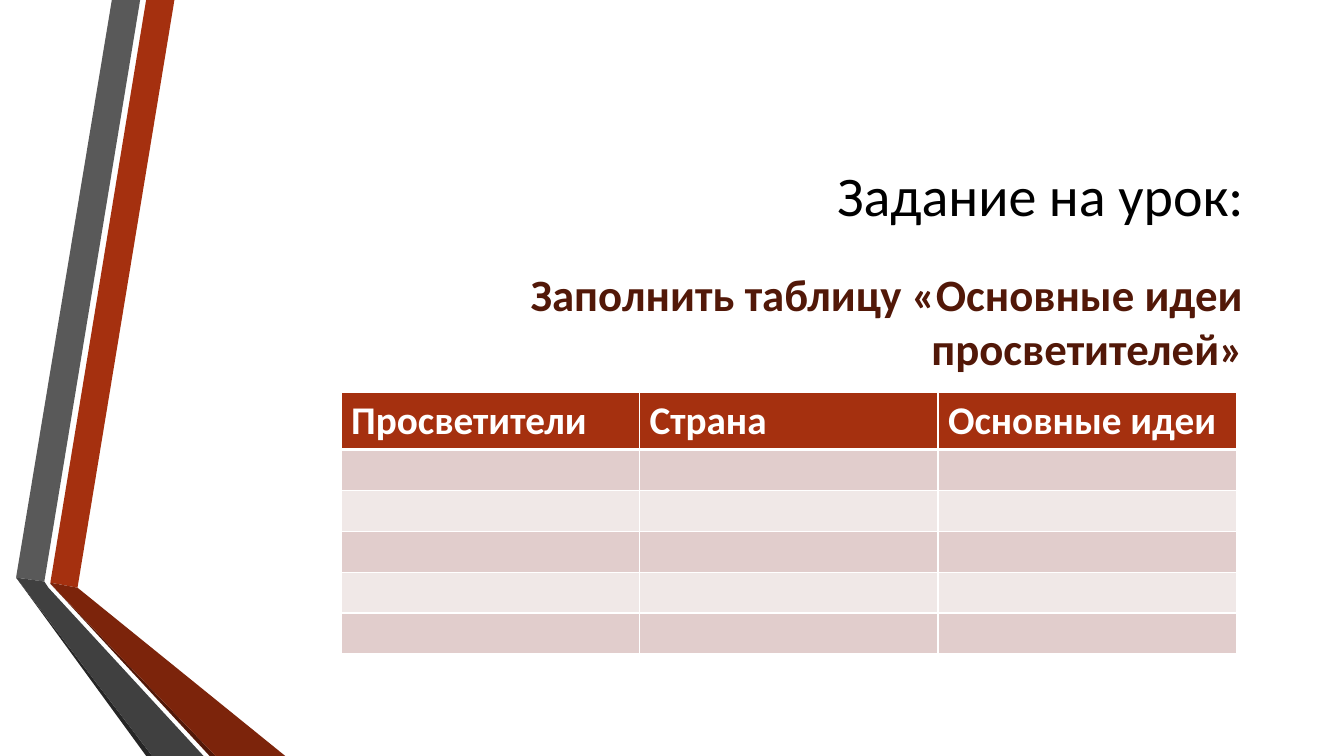
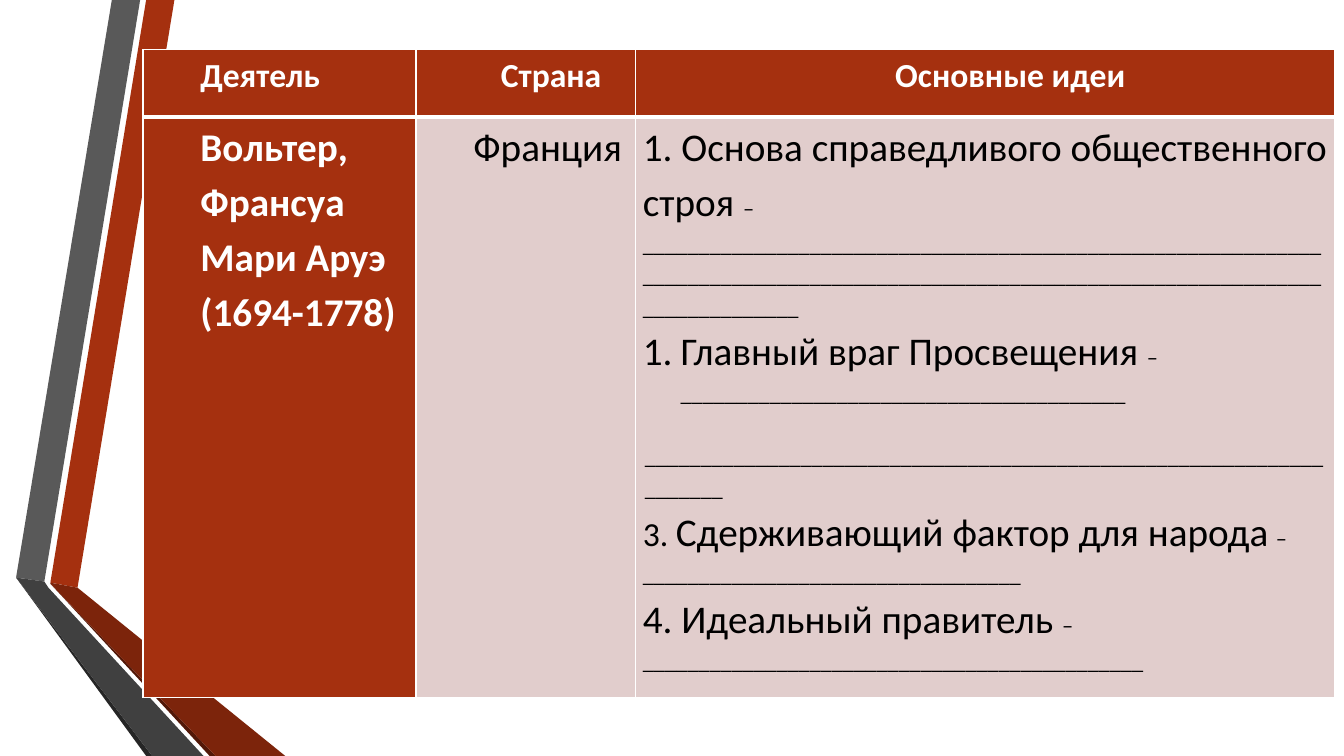
from lxml import etree
from pptx import Presentation
from pptx.dml.color import RGBColor
from pptx.enum.text import MSO_ANCHOR, MSO_AUTO_SIZE, PP_ALIGN
from pptx.oxml.ns import qn
from pptx.util import Pt

LEFT, CENTER, RIGHT = PP_ALIGN.LEFT, PP_ALIGN.CENTER, PP_ALIGN.RIGHT
BOTTOM = MSO_ANCHOR.BOTTOM
NO_AUTOFIT = MSO_AUTO_SIZE.NONE
TITLE_ONLY, BLANK = 5, 6

FONT = "Calibri"
WHITE, BLACK = "FFFFFF", "000000"
RED, DARK_RED, MAROON = "A5300F", "7C240B", "521808"
GREY, DARK_GREY, CHARCOAL = "595959", "404040", "262626"
PINK, PALE_PINK = "E1CDCC", "F0E8E7"

# Folded ribbons at the left edge: colour and outline in points
RIBBONS = [
    (RED, [(36, 416.2), (55.4, 419.8), (124.6, 0), (104.4, 0)]),
    (GREY, [(100.1, 0), (79.9, 0), (11.5, 412.6), (31.7, 415.4)]),
    (CHARCOAL, [(11.5, 412.6), (104.4, 540), (108.7, 540)]),
    (MAROON, [(36, 416.9), (149.8, 540), (154.1, 540)]),
    (DARK_RED, [(36, 416.2), (36, 416.9), (154.1, 540), (203.8, 540), (55.4, 419.8)]),
    (DARK_GREY, [(145.4, 540), (34.6, 419.8), (31.7, 415.4), (11.5, 412.6), (108.7, 540)]),
]


def color(value):
    return RGBColor.from_string(value)


def add_run(paragraph, text, size, font_color, bold=False):
    run = paragraph.add_run()
    run.text = text
    run.font.name = FONT
    run.font.size = Pt(size)
    run.font.bold = bold
    run.font.color.rgb = color(font_color)


def add_ribbons(presentation, slide):
    """Draw the ribbons and move them to the master, so every slide shows them."""
    master_tree = presentation.slide_master.shapes.element
    for number, (fill, outline) in enumerate(RIBBONS, start=101):
        points = [(Pt(x), Pt(y)) for x, y in outline]
        builder = slide.shapes.build_freeform(*points[0])
        builder.add_line_segments(points[1:], close=True)
        shape = builder.convert_to_shape()
        shape.shadow.inherit = False
        shape.fill.solid()
        shape.fill.fore_color.rgb = color(fill)
        shape.line.fill.background()
        shape.element.nvSpPr.cNvPr.set("id", str(number))
        master_tree.append(shape.element)


def set_borders(cell, top=1, bottom=1):
    properties = cell._tc.get_or_add_tcPr()
    edges = (("a:lnL", 1), ("a:lnR", 1), ("a:lnT", top), ("a:lnB", bottom))
    for position, (tag, width) in enumerate(edges):
        line = etree.Element(qn(tag), w=str(Pt(width)))
        fill = etree.SubElement(line, qn("a:solidFill"))
        etree.SubElement(fill, qn("a:srgbClr"), val=WHITE)
        properties.insert(position, line)


def add_table(slide, box, widths, heights, fills):
    """Add a table with white rules and a thick rule below the header."""
    frame = slide.shapes.add_table(len(heights), len(widths), *map(Pt, box))
    table = frame.table
    table.horz_banding = False
    for column, width in zip(table.columns, widths):
        column.width = Pt(width)
    for row_index, (row, height) in enumerate(zip(table.rows, heights)):
        row.height = Pt(height)
        for cell, fill in zip(row.cells, fills[row_index]):
            cell.fill.solid()
            cell.fill.fore_color.rgb = color(fill)
            set_borders(cell, top=3 if row_index == 1 else 1,
                        bottom=3 if row_index == 0 else 1)
    return table


def set_indent(paragraph, margin, first_line=0, numbered=False):
    properties = paragraph._p.get_or_add_pPr()
    properties.set("marL", str(Pt(margin)))
    properties.set("indent", str(Pt(first_line)))
    if numbered:
        etree.SubElement(properties, qn("a:buAutoNum"), type="arabicPeriod")


def fill_cell(cell, paragraphs, font_color, bold=False, align=LEFT):
    """Each paragraph is its runs plus optional indent and space before."""
    cell.margin_left = cell.margin_right = Pt(5)
    cell.margin_top = cell.margin_bottom = 0
    frame = cell.text_frame
    for index, (runs, layout) in enumerate(paragraphs):
        paragraph = frame.add_paragraph() if index else frame.paragraphs[0]
        paragraph.alignment = align
        paragraph.line_spacing = 1.15
        paragraph.space_before = Pt(layout.get("before", 0))
        set_indent(paragraph, layout.get("margin", 0),
                   layout.get("first_line", 0), layout.get("numbered", False))
        for text, size in runs:
            add_run(paragraph, text, size, font_color, bold)


def add_heading(slide, box, text):
    title = slide.shapes.title
    title.left, title.top, title.width, title.height = map(Pt, box)
    frame = title.text_frame
    frame.auto_size = NO_AUTOFIT
    frame.vertical_anchor = BOTTOM
    paragraph = frame.paragraphs[0]
    paragraph.alignment = RIGHT
    add_run(paragraph, text, 40, BLACK)


def add_instruction(slide, box, text):
    frame = slide.shapes.add_textbox(*map(Pt, box)).text_frame
    frame.word_wrap = True
    paragraph = frame.paragraphs[0]
    paragraph.alignment = RIGHT
    paragraph.space_before, paragraph.space_after = Pt(6.4), Pt(6)
    add_run(paragraph, text, 32, MAROON, bold=True)


def build_task_slide(slide):
    left, width = 192, 703.5
    add_heading(slide, (left, 0, width, 166.5), "Задание на урок:")
    add_instruction(slide, (left, 187.2, width, 288),
                    "Заполнить таблицу «Основные идеи просветителей»")

    # Empty table to be filled in by the class
    headers = ["Просветители", "Страна", "Основные идеи"]
    row_colors = [RED, PINK, PALE_PINK, PINK, PALE_PINK, PINK]
    table = add_table(slide, (243.6, 280.2, 639.6, 175.2), [213.2] * 3, [29.2] * 6,
                      [[fill] * 3 for fill in row_colors])
    for cell, header in zip(table.rows[0].cells, headers):
        add_run(cell.text_frame.paragraphs[0], header, 28, WHITE, bold=True)


def build_thinker_slide(slide):
    widths, heights = [195, 157, 499], [48, 414.5]
    table = add_table(slide, (102.2, 35.5, sum(widths), sum(heights)), widths, heights,
                      [[RED] * 3, [RED, PINK, PINK]])
    indented = {"margin": 36}

    # Header row
    headers = [("Деятель", LEFT), ("Страна", CENTER), ("Основные идеи", CENTER)]
    for cell, (header, align) in zip(table.rows[0].cells, headers):
        fill_cell(cell, [([(header, 24)], indented)], WHITE, bold=True, align=align)

    # Thinker, country and ideas with lines to write on
    thinker, country, ideas = table.rows[1].cells
    fill_cell(thinker, [([("Вольтер, Франсуа Мари Аруэ", 28)], indented),
                        ([("(1694-1778)", 28)], indented)], WHITE, bold=True)
    fill_cell(country, [([("Франция", 28)], indented)], BLACK)
    fill_cell(ideas, [
        ([("1. Основа справедливого общественного строя ", 28),
          ("– " + "_" * 136, 16)], {}),
        ([("Главный враг Просвещения ", 28), ("–" + "_" * 40, 16)],
         {"margin": 27, "first_line": -27, "numbered": True}),
        ([("_" * 68, 16)], {"margin": 1.5, "before": 22.5}),
        ([("3. ", 24), ("Сдерживающий фактор для народа", 28), (" ", 24),
          ("– " + "_" * 34, 16)], {}),
        ([("4. Идеальный правитель ", 28), ("– " + "_" * 45, 16)], {}),
    ], BLACK)


def main():
    presentation = Presentation()
    presentation.slide_width, presentation.slide_height = Pt(960), Pt(540)
    layouts = presentation.slide_layouts

    task_slide = presentation.slides.add_slide(layouts[TITLE_ONLY])
    add_ribbons(presentation, task_slide)
    build_task_slide(task_slide)
    build_thinker_slide(presentation.slides.add_slide(layouts[BLANK]))

    presentation.save("out.pptx")


if __name__ == "__main__":
    main()
